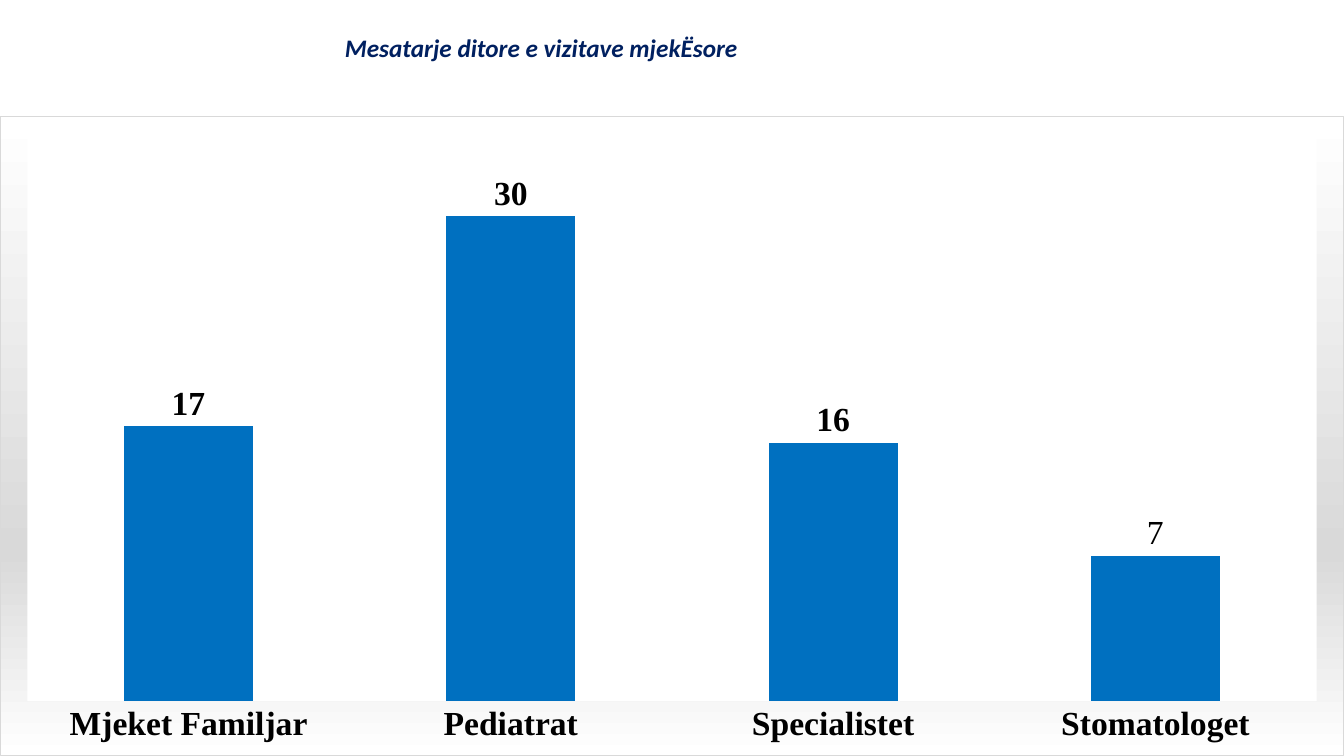
from lxml import etree
from pptx import Presentation, util as u
from pptx.chart import data as chart_data
from pptx.dml.color import RGBColor
from pptx.enum import chart as charts, text
from pptx.oxml import ns, parse_xml

VISITS = {"Mjeket Familjar": 17, "Pediatrat": 30, "Specialistet": 16, "Stomatologet": 9}
LABEL_OVERRIDES = {3: "7"}


def rgb(value):
    return RGBColor.from_string(value)


def shape_properties(content):
    """Return a c:spPr element for a part of a chart."""
    return parse_xml(f'<c:spPr {ns.nsdecls("c", "a")}>{content}</c:spPr>')


def solid(value):
    return f'<a:solidFill><a:srgbClr val="{value}"/></a:solidFill>'


class SlideBuilder:
    """Holds the style and the current slide."""

    title_font, chart_font = "Calibri", "Times New Roman"
    navy, blue, black, white, grey = "002060", "0070C0", "000000", "FFFFFF", "D9D9D9"

    def __init__(self, page):
        self.page = page

    def style(self, font, name, size, color, bold=False, italic=False):
        font.name, font.size = name, u.Pt(size)
        font.bold, font.italic = bold, italic
        font.color.rgb = rgb(color)

    def title(self, wording, left, top, width, height):
        box = self.page.shapes.title
        box.left, box.top = u.Inches(left), u.Inches(top)
        box.width, box.height = u.Inches(width), u.Inches(height)
        frame = box.text_frame
        frame.text = wording
        frame.word_wrap = True
        frame.auto_size = text.MSO_AUTO_SIZE.NONE
        frame.vertical_anchor = text.MSO_ANCHOR.TOP
        para = frame.paragraphs[0]
        para.alignment = text.PP_ALIGN.LEFT
        self.style(para.runs[0].font, self.title_font, 18, self.navy, True, True)

    def column_chart(self, values, overrides, left, top, width, height):
        source = chart_data.CategoryChartData(number_format="0")
        source.categories = list(values)
        source.add_series("Series 1", list(values.values()))
        chart = self.page.shapes.add_chart(
            charts.XL_CHART_TYPE.COLUMN_CLUSTERED, u.Inches(left), u.Inches(top),
            u.Inches(width), u.Inches(height), source).chart
        chart.has_legend = chart.has_title = False
        self.style(chart.font, self.title_font, 10, self.black)
        self.axes(chart)
        plot = chart.plots[0]
        plot.gap_width, plot.overlap, plot.vary_by_categories = 150, -25, False
        series = plot.series[0]
        series.format.fill.solid()
        series.format.fill.fore_color.rgb = rgb(self.blue)
        self.labels(series, overrides)
        self.backgrounds(chart)

    def axes(self, chart):
        categories, scale = chart.category_axis, chart.value_axis
        categories.major_tick_mark = charts.XL_TICK_MARK.NONE
        categories.format.line.fill.background()
        self.style(categories.tick_labels.font, self.chart_font, 24, self.black, True)
        scale.minimum_scale, scale.maximum_scale = 0, 35
        scale.has_major_gridlines = False
        scale.visible = False

    def labels(self, series, overrides):
        labels = series.data_labels
        labels.show_value = True
        labels.number_format, labels.number_format_is_linked = "0", False
        labels.position = charts.XL_LABEL_POSITION.OUTSIDE_END
        self.style(labels.font, self.chart_font, 24, self.black, True)
        for index, wording in overrides.items():
            label = series.points[index].data_label
            label.text_frame.text = wording
            span = label.text_frame.paragraphs[0].runs[0]
            self.style(span.font, self.chart_font, 24, self.black)
            label.position = charts.XL_LABEL_POSITION.OUTSIDE_END

    def backgrounds(self, chart):
        """Set the gradient frame and the white, fixed plot area."""
        stops = "".join(
            f'<a:gs pos="{place * 1000}"><a:srgbClr val="{color}"/></a:gs>'
            for place, color in ((0, self.white), (68, self.grey), (100, self.white)))
        chart.element.find(ns.qn("c:chart")).addnext(shape_properties(
            f'<a:gradFill><a:gsLst>{stops}</a:gsLst><a:lin ang="5400000" scaled="0"/>'
            f'</a:gradFill><a:ln w="9525">{solid(self.grey)}</a:ln>'))
        area = chart.element.find(".//" + ns.qn("c:plotArea"))
        area.append(shape_properties(solid(self.white) + "<a:ln><a:noFill/></a:ln>"))
        for old in area.findall(ns.qn("c:layout")):
            area.remove(old)
        layout = etree.Element(ns.qn("c:layout"))
        manual = etree.SubElement(layout, ns.qn("c:manualLayout"))
        for name, value in (("layoutTarget", "inner"), ("xMode", "edge"), ("yMode", "edge"),
                            ("x", "0.02"), ("y", "0.03"), ("w", "0.96"), ("h", "0.885")):
            etree.SubElement(manual, ns.qn("c:" + name)).set("val", value)
        area.insert(0, layout)


def main():
    deck = Presentation()
    deck.slide_width, deck.slide_height = u.Inches(13.33), u.Inches(7.5)
    title_only = deck.slide_layouts[5]
    builder = SlideBuilder(deck.slides.add_slide(title_only))
    builder.column_chart(VISITS, LABEL_OVERRIDES, 0, 1.15, 13.33, 6.35)
    builder.title("Mesatarje ditore e vizitave mjekËsore", 3.32, 0.27, 6.67, 0.71)
    deck.save("out.pptx")


if __name__ == "__main__":
    main()
